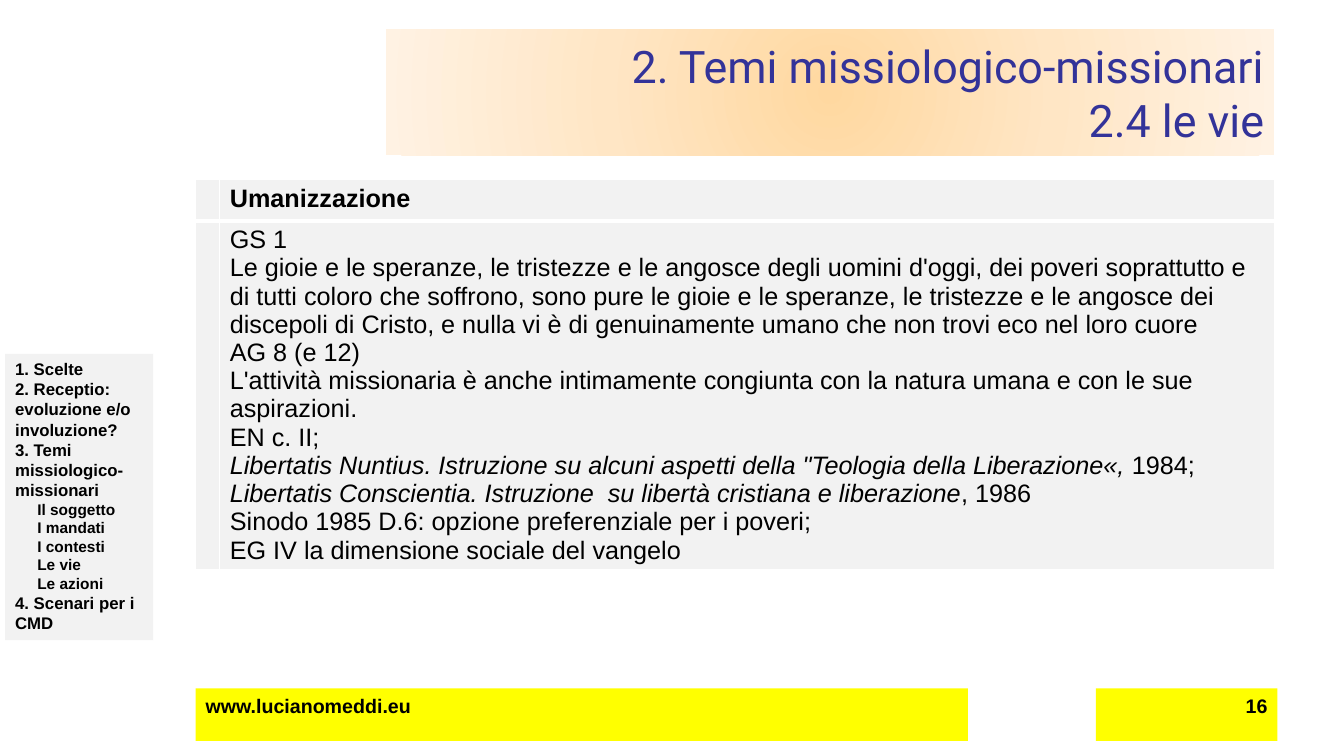
from pptx import Presentation
from pptx.dml.color import RGBColor
from pptx.enum.shapes import MSO_SHAPE
from pptx.enum.text import MSO_ANCHOR, MSO_AUTO_SIZE, PP_ALIGN
from pptx.oxml import parse_xml
from pptx.oxml.ns import nsdecls
from pptx.util import Inches, Pt

LEFT, RIGHT = PP_ALIGN.LEFT, PP_ALIGN.RIGHT
TITLE_AND_CONTENT = 1

COLORS = {
    "text": "000000",
    "title": "333399",
    "panel": "F2F2F2",
    "footer": "FFFF00",
    "border": "FFFFFF",
    "glow_center": "FFD8A0",
    "glow_middle": "FFE6C5",
    "glow_edge": "FFF2E3",
}

TITLE_FORMAT = {"name": "Roboto", "size": Pt(32), "bold": False}
CHAPTER_FORMAT = {"name": "Arial", "size": Pt(12), "bold": True}
SECTION_FORMAT = {**CHAPTER_FORMAT, "size": Pt(11)}
FOOTER_FORMAT = {"name": "Arial", "size": Pt(14), "bold": True}
HEADING_FORMAT = {"name": "Arial", "size": Pt(18), "bold": True}
QUOTE_FORMAT = {**HEADING_FORMAT, "bold": False}
SOURCE_FORMAT = {**QUOTE_FORMAT, "italic": True}

OUTLINE = [
    (0, "1. Scelte"),
    (0, "2. Receptio: evoluzione e/o involuzione?"),
    (0, "3. Temi missiologico-missionari"),
    (1, "Il soggetto"),
    (1, "I mandati"),
    (1, "I contesti"),
    (1, "Le vie"),
    (1, "Le azioni"),
    (0, "4. Scenari per i CMD"),
]

# Each paragraph is a list of (text, format) runs.
QUOTES = [
    [("GS 1", QUOTE_FORMAT)],
    [("Le gioie e le speranze, le tristezze e le angosce degli uomini d'oggi, "
      "dei poveri soprattutto e di tutti coloro che soffrono, sono pure le gioie "
      "e le speranze, le tristezze e le angosce dei discepoli di Cristo, e nulla "
      "vi è di genuinamente umano che non trovi eco nel loro cuore", QUOTE_FORMAT)],
    [("AG 8 (e 12)", QUOTE_FORMAT)],
    [("L'attività missionaria è anche intimamente congiunta con la natura umana "
      "e con le sue aspirazioni.", QUOTE_FORMAT)],
    [("EN c. II;\n", QUOTE_FORMAT),
     ("Libertatis Nuntius. Istruzione su alcuni aspetti della "
      "\"Teologia della Liberazione«, ", SOURCE_FORMAT),
     ("1984;", QUOTE_FORMAT)],
    [("Libertatis Conscientia. Istruzione  su libertà cristiana e liberazione",
      SOURCE_FORMAT),
     (", 1986\nSinodo 1985 D.6: opzione preferenziale per i poveri;", QUOTE_FORMAT)],
    [("EG IV la dimensione sociale del vangelo", QUOTE_FORMAT)],
]


def rgb(color):
    return RGBColor.from_string(COLORS[color])


def place(shape, box):
    for name, length in zip(("left", "top", "width", "height"), box):
        setattr(shape, name, Inches(length))


def fill_solid(target, color):
    target.fill.solid()
    target.fill.fore_color.rgb = rgb(color)


def write(paragraph, runs, color="text", align=LEFT):
    """Add formatted runs; a newline in a run's text becomes a line break."""
    paragraph.alignment = align
    for text, font_format in runs:
        for number, line in enumerate(text.split("\n")):
            if number:
                paragraph.add_line_break()
            if line:
                run = paragraph.add_run()
                run.text = line
                for name, value in font_format.items():
                    setattr(run.font, name, value)
                run.font.color.rgb = rgb(color)


def fill_glow(shape):
    """Fill with a circular gradient that spreads from the centre."""
    stops = zip((0, 50, 100), ("glow_center", "glow_middle", "glow_edge"))
    stop_xml = "".join(
        f'<a:gs pos="{percent * 1000}"><a:srgbClr val="{COLORS[color]}"/></a:gs>'
        for percent, color in stops)
    shape.fill.background()
    properties = shape.element.spPr
    gradient = parse_xml(
        f'<a:gradFill {nsdecls("a")}><a:gsLst>{stop_xml}</a:gsLst>'
        '<a:path path="circle"><a:fillToRect l="50000" t="50000" r="50000" b="50000"/>'
        '</a:path></a:gradFill>')
    properties.replace(properties.find("{*}noFill"), gradient)


def add_title(slide, box):
    title = slide.shapes.title
    place(title, box)
    fill_glow(title)
    frame = title.text_frame
    frame.auto_size = MSO_AUTO_SIZE.NONE
    frame.vertical_anchor = MSO_ANCHOR.MIDDLE
    write(frame.paragraphs[0],
          [("2. Temi missiologico-missionari\n2.4\u00a0le vie".replace("\u00a0", " "),
            TITLE_FORMAT)], "title", RIGHT)


def add_outline(slide, box):
    outline = slide.placeholders[1]
    place(outline, box)
    fill_solid(outline, "panel")
    frame = outline.text_frame
    frame.auto_size = MSO_AUTO_SIZE.NONE
    for number, (level, text) in enumerate(OUTLINE):
        paragraph = frame.add_paragraph() if number else frame.paragraphs[0]
        paragraph.level = level
        paragraph.space_before = Pt(0)
        properties = paragraph._p.get_or_add_pPr()
        properties.set("marL", str(Inches(0.28 * level)))
        properties.set("indent", str(Inches(-0.06 * level)))
        properties.append(parse_xml(f'<a:buNone {nsdecls("a")}/>'))
        write(paragraph, [(text, SECTION_FORMAT if level else CHAPTER_FORMAT)])


def add_footer_block(slide, box, text, align):
    block = slide.shapes.add_shape(MSO_SHAPE.RECTANGLE, *map(Inches, box))
    block.shadow.inherit = False
    fill_solid(block, "footer")
    block.line.fill.background()
    frame = block.text_frame
    frame.word_wrap = True
    frame.vertical_anchor = MSO_ANCHOR.TOP
    write(frame.paragraphs[0], [(text, FOOTER_FORMAT)], align=align)


def style_cell(cell, bottom_width):
    fill_solid(cell, "panel")
    properties = cell._tc.get_or_add_tcPr()
    widths = {"lnL": 1, "lnR": 1, "lnT": 1, "lnB": bottom_width}
    for position, (side, width) in enumerate(widths.items()):
        properties.insert(position, parse_xml(
            f'<a:{side} {nsdecls("a")} w="{Pt(width)}"><a:solidFill>'
            f'<a:srgbClr val="{COLORS["border"]}"/></a:solidFill></a:{side}>'))


def add_quotes_table(slide, box):
    left, top, width, height = box
    marker_width, heading_height = 0.24, 0.41
    table = slide.shapes.add_table(2, 2, *map(Inches, box)).table
    for column, length in zip(table.columns, (marker_width, width - marker_width)):
        column.width = Inches(length)
    for row, length in zip(table.rows, (heading_height, height - heading_height)):
        row.height = Inches(length)
    for row, bottom_width in zip(table.rows, (3, 1)):
        for cell in row.cells:
            style_cell(cell, bottom_width)
    write(table.cell(0, 1).text_frame.paragraphs[0], [("Umanizzazione", HEADING_FORMAT)])
    frame = table.cell(1, 1).text_frame
    for number, runs in enumerate(QUOTES):
        write(frame.add_paragraph() if number else frame.paragraphs[0], runs)


def main():
    presentation = Presentation()
    presentation.slide_width = Inches(13.33)
    presentation.slide_height = Inches(7.5)
    slide = presentation.slides.add_slide(presentation.slide_layouts[TITLE_AND_CONTENT])
    add_outline(slide, (0.05, 3.51, 1.47, 2.84))
    add_title(slide, (3.83, 0.29, 8.81, 1.25))
    add_footer_block(slide, (1.94, 6.83, 7.66, 0.52), "www.lucianomeddi.eu", LEFT)
    add_footer_block(slide, (10.87, 6.83, 1.8, 0.52), "16", RIGHT)
    add_quotes_table(slide, (1.94, 1.78, 10.7, 3.86))
    presentation.save("out.pptx")


if __name__ == "__main__":
    main()
